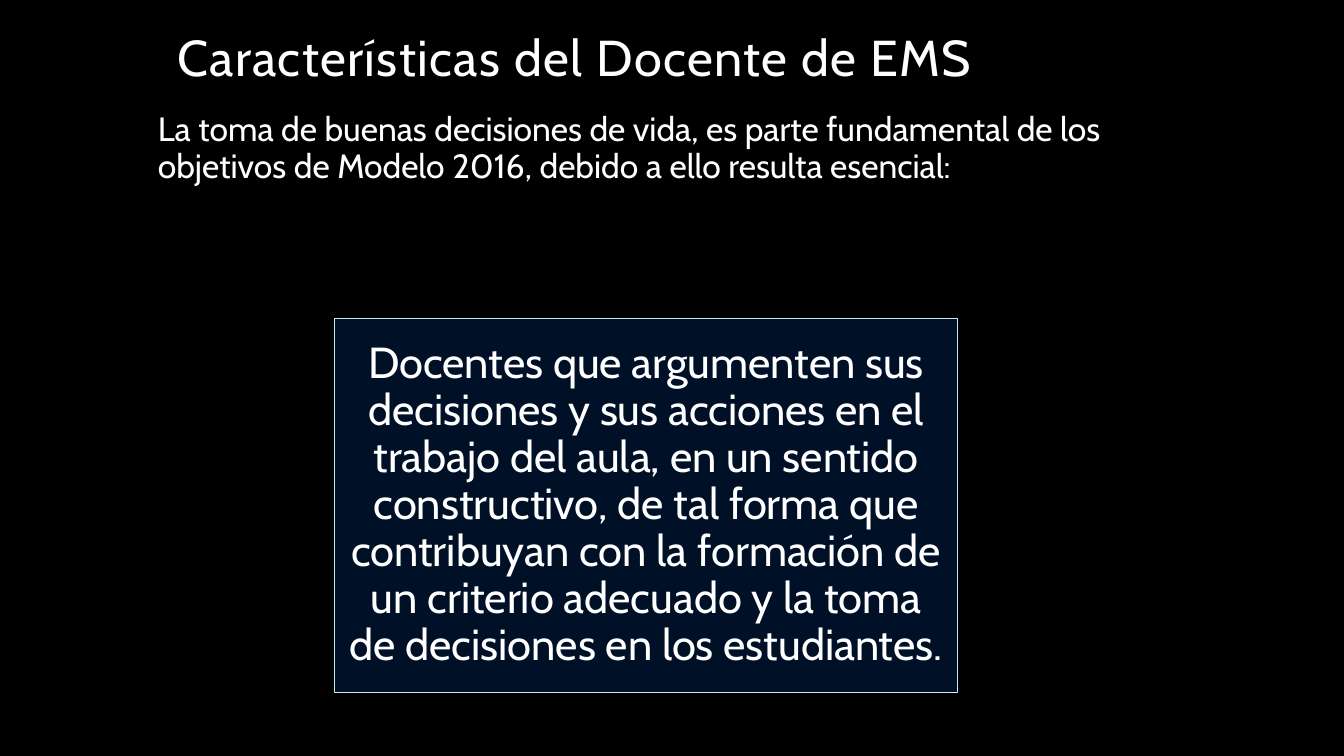
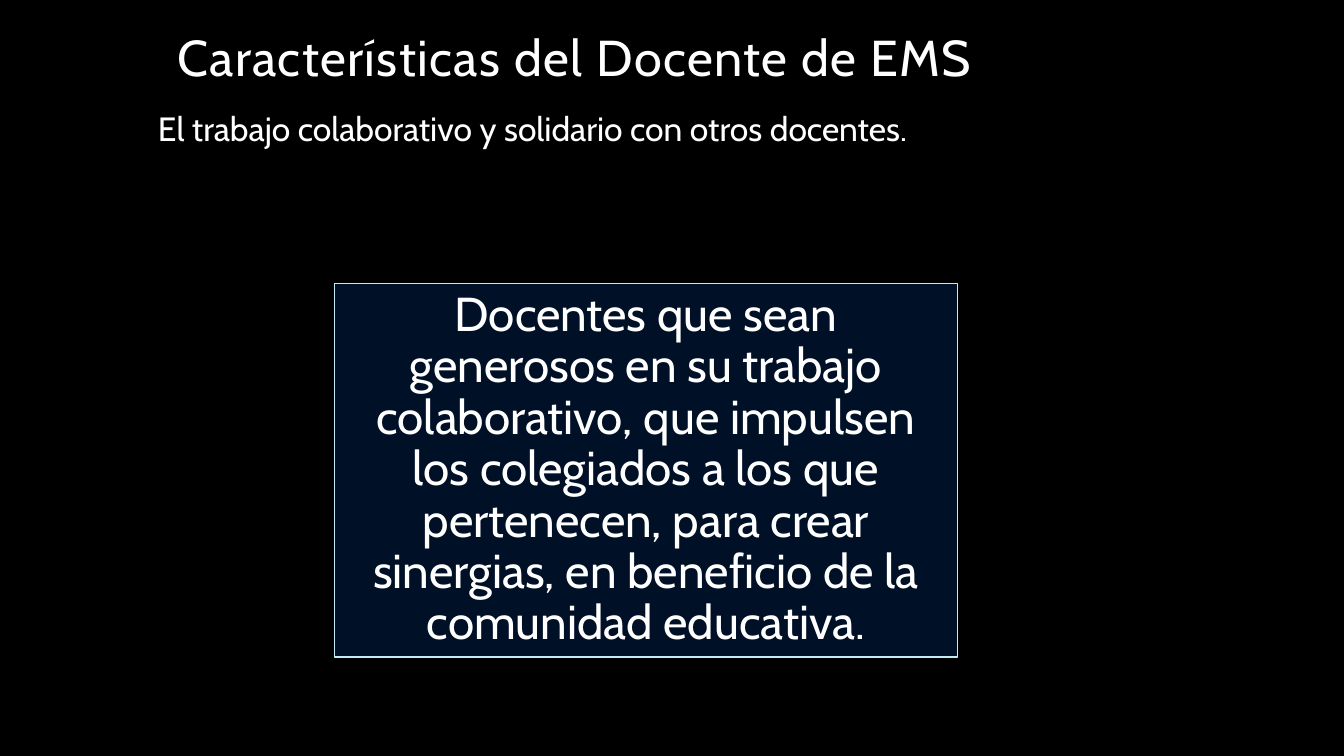
from dataclasses import dataclass

from pptx import Presentation
from pptx.dml.color import RGBColor as Color
from pptx.enum.shapes import MSO_SHAPE as Shape
from pptx.enum.text import MSO_ANCHOR as Anchor, PP_ALIGN as Align
from pptx.util import Cm, Pt


@dataclass(frozen=True)
class Theme:
    font: str = "Cabin"
    background: Color = Color.from_string("000000")
    text: Color = Color.from_string("FFFFFF")
    panel: Color = Color.from_string("001027")
    border: Color = Color.from_string("C1EBF7")
    title_size: int = 36
    intro_size: int = 24
    line_spacing: float = 0.9
    title_tracking: int = 100


theme = Theme()


def write(box, text, size, anchor=Anchor.TOP, align=Align.LEFT):
    frame = box.text_frame
    frame.word_wrap = True
    frame.vertical_anchor = anchor
    para = frame.paragraphs[0]
    para.alignment = align
    para.line_spacing = theme.line_spacing
    span = para.add_run()
    span.text = text
    span.font.name = theme.font
    span.font.size = Pt(size)
    span.font.color.rgb = theme.text
    return span


title = "Características del Docente de EMS"
pages = [
    {
        "intro": "La toma de buenas decisiones de vida, es parte fundamental de los "
                 "objetivos de Modelo 2016, debido a ello resulta esencial:",
        "statement": "Docentes que argumenten sus decisiones y sus acciones en el "
                     "trabajo del aula, en un sentido constructivo, de tal forma que "
                     "contribuyan con la formación de un criterio adecuado y la toma "
                     "de decisiones en los estudiantes.",
        "top": 8.03,
        "size": 31,
        "inset": 0.33,
    },
    {
        "intro": "El trabajo colaborativo y solidario con otros docentes.",
        "statement": "Docentes que sean generosos en su trabajo colaborativo, que "
                     "impulsen los colegiados a los que pertenecen, para crear "
                     "sinergias, en beneficio de la comunidad educativa.",
        "top": 7.14,
        "size": 34,
        "inset": 0.36,
    },
]

deck = Presentation()
deck.slide_width = Cm(33.87)
deck.slide_height = Cm(19.05)
blank = deck.slide_layouts[6]

for content in pages:
    page = deck.slides.add_slide(blank)
    page.background.fill.solid()
    page.background.fill.fore_color.rgb = theme.background

    title_box = page.shapes.add_textbox(Cm(4.22), Cm(0), Cm(25.4), Cm(2.34))
    title_span = write(title_box, title, theme.title_size, Anchor.BOTTOM)
    title_span.font._element.set("spc", str(theme.title_tracking))

    intro_box = page.shapes.add_textbox(Cm(3.73), Cm(2.72), Cm(25.88), Cm(4.39))
    write(intro_box, content["intro"], theme.intro_size)

    panel = page.shapes.add_shape(
        Shape.RECTANGLE, Cm(8.43), Cm(content["top"]), Cm(15.7), Cm(9.42)
    )
    panel.shadow.inherit = False
    panel.fill.solid()
    panel.fill.fore_color.rgb = theme.panel
    panel.line.color.rgb = theme.border
    panel.line.width = Pt(1)
    frame = panel.text_frame
    frame.margin_left = frame.margin_right = Cm(content["inset"])
    frame.margin_top = frame.margin_bottom = Cm(content["inset"])
    write(panel, content["statement"], content["size"], Anchor.MIDDLE, Align.CENTER)

deck.save("out.pptx")
